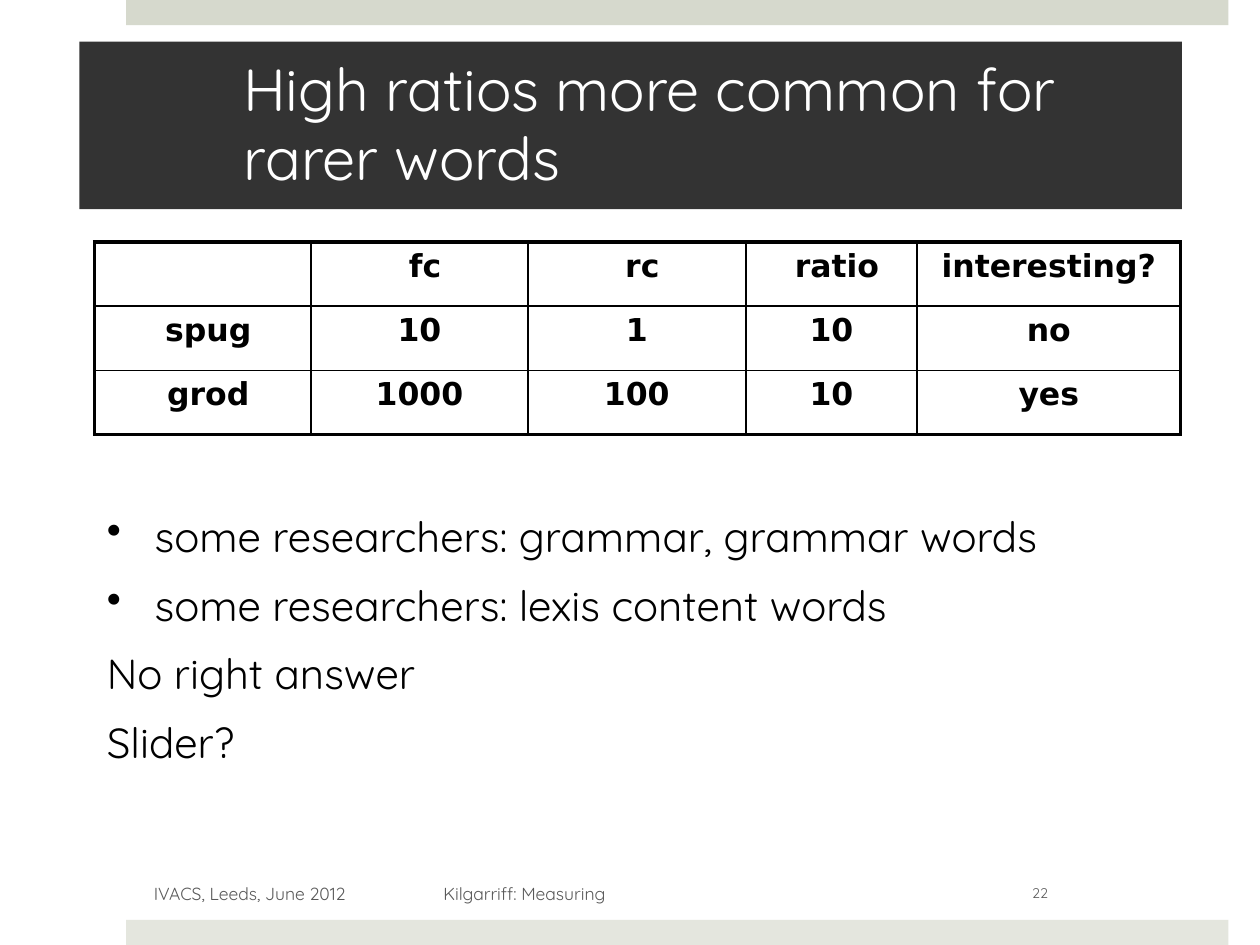
from dataclasses import dataclass

from lxml.etree import SubElement
from pptx import Presentation
from pptx.dml.color import RGBColor
from pptx.enum.shapes import MSO_SHAPE
from pptx.enum.text import MSO_ANCHOR, PP_ALIGN
from pptx.oxml.ns import qn
from pptx.util import Inches, Pt


@dataclass(frozen=True)
class Theme:
    font: str = "Quicksand"
    table_font: str = "DejaVu Sans"
    top_band: str = "D6D9CD"
    bottom_band: str = "E4E6DE"
    title_fill: str = "333333"
    title_text: str = "FFFFFF"
    ink: str = "000000"
    footer_text: str = "595959"
    title_size: float = 34
    body_size: float = 24
    table_size: float = 18
    footer_size: float = 10
    number_size: float = 8
    inner_line: float = 1
    outer_line: float = 2.25


THEME = Theme()

# Content
TITLE = "High ratios more common for rarer words"
ROWS = [
    ["", " fc", " rc", " ratio", "interesting?"],
    [" spug", "10", "1", "10", "no"],
    [" grod", "1000", "100", "10", "yes"],
]
COLUMN_WIDTHS = [1.72, 1.72, 1.73, 1.36, 2.09]
ROW_HEIGHT = 0.51
BODY = [  # text, bulleted
    ("some researchers: grammar, grammar words", True),
    ("some researchers: lexis content words", True),
    ("No right answer", False),
    ("Slider?", False),
]
FOOTERS = [  # text, left, width, alignment, size
    ("IVACS, Leeds, June 2012", 0.67, 2.17, PP_ALIGN.RIGHT, THEME.footer_size),
    ("Kilgarriff: Measuring", 3.42, 3.17, PP_ALIGN.LEFT, THEME.footer_size),
    ("22", 7.17, 2.17, PP_ALIGN.CENTER, THEME.number_size),
]
BANDS = [(0, THEME.top_band), (7.3, THEME.bottom_band)]  # top, colour


def color(value):
    return RGBColor.from_string(value)


def write(para, text, size, ink, font=THEME.font, align=PP_ALIGN.LEFT, bold=False):
    para.text = text
    para.alignment = align
    para.font.size = Pt(size)
    para.font.name = font
    para.font.bold = bold
    para.font.color.rgb = color(ink)


def add_block(page, left, top, width, height, fill):
    block = page.shapes.add_shape(
        MSO_SHAPE.RECTANGLE, Inches(left), Inches(top), Inches(width), Inches(height))
    block.shadow.inherit = False
    block.fill.solid()
    block.fill.fore_color.rgb = color(fill)
    block.line.fill.background()
    return block


def add_text_frame(page, left, top, width, height):
    box = page.shapes.add_textbox(
        Inches(left), Inches(top), Inches(width), Inches(height))
    box.text_frame.word_wrap = True
    return box.text_frame


def set_bullet(para):
    properties = para._p.get_or_add_pPr()
    properties.set("marL", str(Inches(0.38)))
    properties.set("indent", str(-Inches(0.38)))
    bullet = properties.makeelement(qn("a:buChar"), {"char": "•"})
    properties.insert_element_before(bullet, "a:tabLst", "a:defRPr", "a:extLst")


def set_borders(cell, row, column):
    edges = {
        "a:lnL": column == 0,
        "a:lnR": column == len(COLUMN_WIDTHS) - 1,
        "a:lnT": row == 0,
        "a:lnB": row == len(ROWS) - 1,
    }
    properties = cell._tc.get_or_add_tcPr()
    for tag, is_outer in edges.items():
        width = THEME.outer_line if is_outer else THEME.inner_line
        line = SubElement(properties, qn(tag), w=str(Pt(width)))
        fill = SubElement(line, qn("a:solidFill"))
        SubElement(fill, qn("a:srgbClr"), val=THEME.ink)


def add_ratio_table(page):
    table = page.shapes.add_table(
        len(ROWS), len(COLUMN_WIDTHS), Inches(0.75), Inches(1.92),
        Inches(sum(COLUMN_WIDTHS)), Inches(ROW_HEIGHT * len(ROWS))).table
    table.first_row = table.horz_banding = False
    for column, width in enumerate(COLUMN_WIDTHS):
        table.columns[column].width = Inches(width)
    for row, texts in enumerate(ROWS):
        table.rows[row].height = Inches(ROW_HEIGHT)
        for column, text in enumerate(texts):
            cell = table.cell(row, column)
            write(cell.text_frame.paragraphs[0], text, THEME.table_size, THEME.ink,
                  THEME.table_font, PP_ALIGN.CENTER, bold=True)
            set_borders(cell, row, column)
            cell.fill.background()


def main():
    deck = Presentation()
    deck.slide_width, deck.slide_height = Inches(10), Inches(7.5)
    page = deck.slides.add_slide(deck.slide_layouts[6])

    # Bands at the top and bottom edges
    for top, fill in BANDS:
        add_block(page, 1, top, 8.75, 0.2, fill)

    # Title
    title = add_block(page, 0.63, 0.33, 8.75, 1.33, THEME.title_fill).text_frame
    title.word_wrap = True
    title.vertical_anchor = MSO_ANCHOR.MIDDLE
    title.margin_left, title.margin_right = Inches(1.3), Inches(0.3)
    write(title.paragraphs[0], TITLE, THEME.title_size, THEME.title_text)
    title.paragraphs[0].line_spacing = 0.97

    add_ratio_table(page)

    # Footer
    for text, left, width, align, size in FOOTERS:
        frame = add_text_frame(page, left, 6.83, width, 0.52)
        frame.vertical_anchor = MSO_ANCHOR.MIDDLE
        write(frame.paragraphs[0], text, size, THEME.footer_text, align=align)

    # Body text, set below the table by its top margin
    body = add_text_frame(page, 0.75, 3.44, 8.27, 2.93)
    body.margin_top = Inches(0.61)
    for index, (text, bulleted) in enumerate(BODY):
        para = body.add_paragraph() if index else body.paragraphs[0]
        write(para, text, THEME.body_size, THEME.ink)
        para.space_after = Pt(10.5)
        if bulleted:
            set_bullet(para)

    deck.save("out.pptx")


if __name__ == "__main__":
    main()
